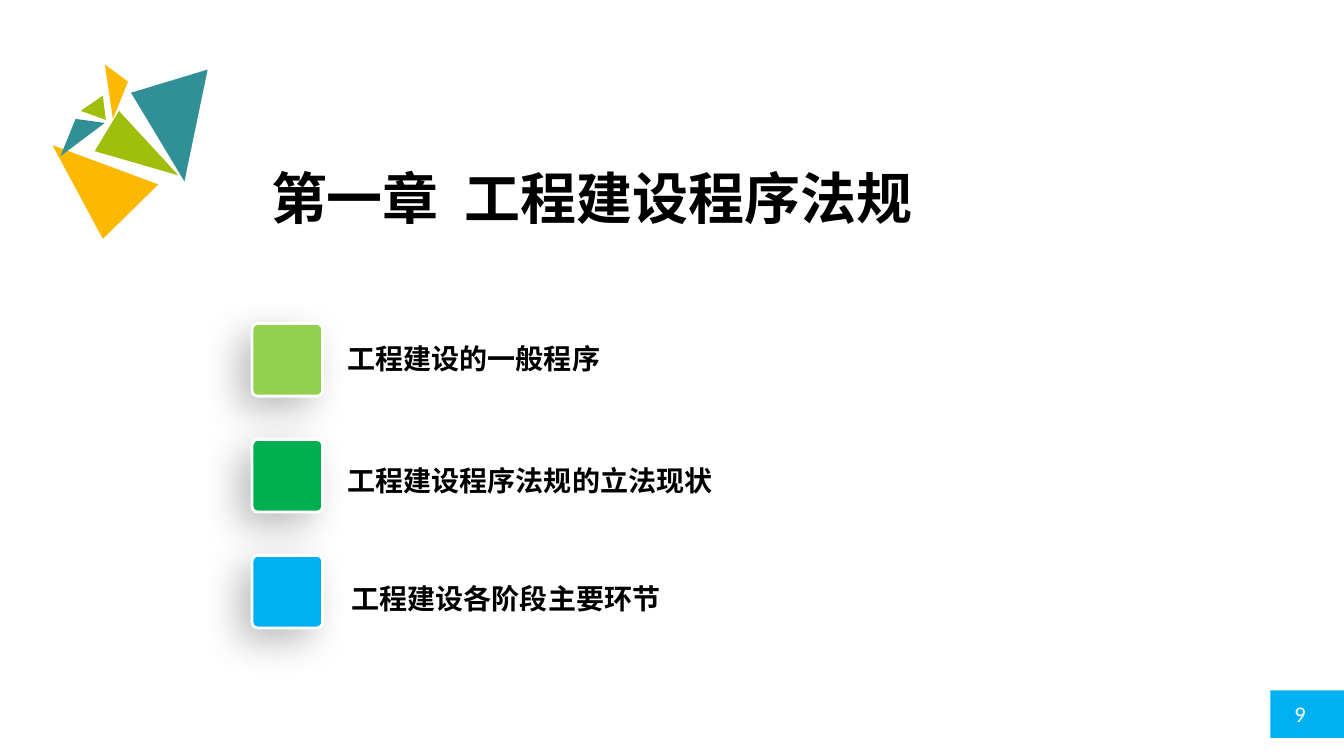
import pptx
import pptx.util
import pptx.dml.color
import pptx.enum.shapes
import pptx.oxml
import pptx.oxml.ns
from dataclasses import dataclass
from lxml import etree

Inches = pptx.util.Inches
Pt = pptx.util.Pt
Kind = pptx.enum.shapes.MSO_SHAPE
qn = pptx.oxml.ns.qn


@dataclass(frozen=True)
class Theme:
    teal: str = "319095"
    olive: str = "A0BF0D"
    gold: str = "FDB900"
    lime: str = "92D050"
    green: str = "00B050"
    blue: str = "00B0F0"
    white: str = "FFFFFF"
    black: str = "000000"
    han: str = "Noto Sans CJK SC"
    latin: str = "Calibri"
    title: int = 40
    item: int = 20
    page: int = 16


class Deck:
    """Draws styled elements on the current slide."""

    def __init__(self, theme):
        self.theme = theme
        self.prs = pptx.Presentation()
        self.prs.slide_width = Inches(13.33)
        self.prs.slide_height = Inches(7.5)
        self.slide = self.prs.slides.add_slide(self.prs.slide_layouts[6])

    def paint(self, shape, color):
        shape.shadow.inherit = False
        shape.fill.solid()
        shape.fill.fore_color.rgb = pptx.dml.color.RGBColor.from_string(color)
        shape.line.fill.background()

    def box(self, kind, place, color):
        shape = self.slide.shapes.add_shape(kind, *map(Inches, place))
        self.paint(shape, color)
        return shape

    def shard(self, color, points):
        first, *rest = [(Inches(x), Inches(y)) for x, y in points]
        pen = self.slide.shapes.build_freeform(*first)
        pen.add_line_segments(rest, close=True)
        self.paint(pen.convert_to_shape(), color)

    def tile(self, top, color):
        shape = self.box(Kind.ROUNDED_RECTANGLE, (2.5, top, 0.7, 0.72), color)
        shape.adjustments[0] = 0.08
        shape.line.color.rgb = pptx.dml.color.RGBColor.from_string(self.theme.white)
        shape.line.width = Pt(2)
        effects = shape._element.spPr.find(qn("a:effectLst"))
        shadow = etree.SubElement(
            effects, qn("a:outerShdw"), blurRad=str(Pt(27)), dist=str(Pt(12)),
            dir="8100000", algn="tr", rotWithShape="0")
        tint = etree.SubElement(shadow, qn("a:srgbClr"), val=self.theme.black)
        etree.SubElement(tint, qn("a:alpha"), val="26000")

    def text(self, words, place, size, face, color, bold=False, lead=1.0, wrap=True):
        frame = self.slide.shapes.add_textbox(*map(Inches, place)).text_frame
        frame.word_wrap = wrap
        para = frame.paragraphs[0]
        para.text = words
        para.line_spacing = lead
        font = para.font
        font.size = Pt(size)
        font.bold = bold
        font.name = face
        font.color.rgb = pptx.dml.color.RGBColor.from_string(color)
        latin = para._p.pPr.find(qn("a:defRPr")).find(qn("a:latin"))
        latin.addnext(latin.makeelement(qn("a:ea"), {"typeface": face}))


def main():
    theme = Theme()
    deck = Deck(theme)

    deck.box(Kind.RECTANGLE, (12.6, 6.85, 0.73, 0.47), theme.blue)
    deck.text("9", (12.74, 6.9, 0.46, 0.37), theme.page, theme.latin,
              theme.white, wrap=False)

    shards = [
        (theme.teal, [(2.06, 0.69), (1.83, 1.8), (1.3, 0.92)]),
        (theme.olive, [(0.94, 1.5), (1.77, 1.74), (1.18, 1.1)]),
        (theme.gold, [(0.52, 1.44), (1.57, 1.83), (1.02, 2.37)]),
        (theme.teal, [(0.75, 1.18), (1.04, 1.22), (0.6, 1.55)]),
        (theme.olive, [(1.02, 0.95), (1.05, 1.19), (0.8, 1.1)]),
        (theme.gold, [(1.04, 0.64), (1.27, 0.81), (1.12, 1.18)]),
    ]
    for color, points in shards:
        deck.shard(color, points)

    deck.text("第一章  工程建设程序法规", (2.59, 1.65, 9.34, 0.96), theme.title,
              theme.han, theme.black, bold=True, lead=0.9)

    items = [
        ("工程建设的一般程序", theme.lime, (3.35, 2.97, 6.67, 0.81), 2.1),
        ("工程建设程序法规的立法现状", theme.green, (3.35, 4.38, 6.67, 0.6), 1.5),
        ("工程建设各阶段主要环节", theme.blue, (3.39, 5.35, 6.67, 0.81), 2.1),
    ]
    for row, (words, color, place, lead) in enumerate(items):
        deck.tile(3.21 + 1.15 * row, color)
        deck.text(words, place, theme.item, theme.han, theme.black,
                  bold=True, lead=lead)

    deck.prs.save("out.pptx")


if __name__ == "__main__":
    main()
